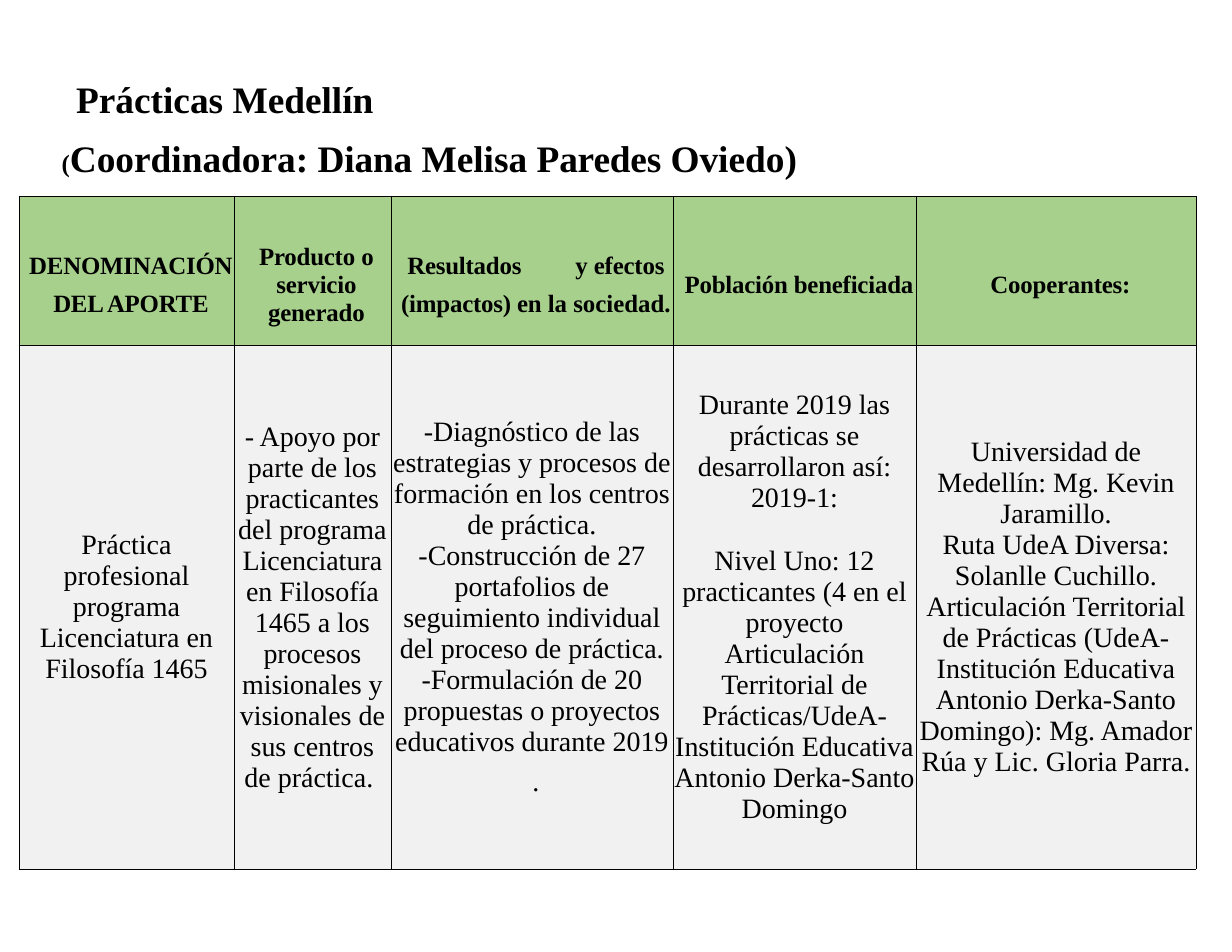
from lxml.etree import SubElement
from pptx import Presentation
from pptx.dml.color import RGBColor
from pptx.enum.text import MSO_ANCHOR, MSO_AUTO_SIZE, PP_ALIGN
from pptx.oxml.ns import qn
from pptx.util import Inches, Pt

FONT = "Times New Roman"
BLACK, GREEN, GRAY = "000000", "A8D08D", "F1F1F1"
TIGHT = -10  # letter spacing, hundredths of a point
COLUMN_WIDTHS = [1.92, 1.4, 2.52, 2.17, 2.5]
ROW_HEIGHTS = [1.33, 4.68]

# One list per column; each paragraph is a list of (text, letter spacing) runs
HEADINGS = [
    [[("DENOMINACIÓN", TIGHT)], [("DEL APORTE", TIGHT)]],
    [[("Producto ", TIGHT), ("o ", 0), ("servicio generado", TIGHT)]],
    [[("Resultados\t", TIGHT), ("y ", 0), ("efectos", TIGHT)],
     [("(impactos) en ", TIGHT), ("la sociedad.", 0)]],
    [[("Población beneficiada", TIGHT)]],
    [[("Cooperantes:", TIGHT)]],
]
HEADING_INDENTS = [0.08, 0.07, 0.07, 0.08, 0.08]
RESULT_TABS = [1.09, 1.41]

# One list per column; each paragraph is (text, space before, indent)
CONTRIBUTION = [
    [("Práctica profesional programa Licenciatura en Filosofía 1465", 0, 0)],
    [("- Apoyo por parte de los practicantes del programa Licenciatura en "
      "Filosofía 1465 a los procesos misionales y visionales de sus centros "
      "de práctica. ", 0, 0)],
    [("-Diagnóstico de las estrategias y procesos de formación en los centros "
      "de práctica.", 0, 0),
     ("-Construcción de 27 portafolios de seguimiento individual del proceso "
      "de práctica.", 0, 0),
     ("-Formulación de 20 propuestas o proyectos educativos durante 2019", 0, 0),
     (".", 6.3, 0.07)],
    [("Durante 2019 las prácticas se desarrollaron así:", 0, 0),
     ("2019-1:", 0, 0),
     ("Nivel Uno: 12 practicantes (4 en el proyecto Articulación Territorial "
      "de Prácticas/UdeA- Institución Educativa Antonio Derka-Santo Domingo",
      20.7, 0)],
    [("Universidad de Medellín: Mg. Kevin Jaramillo.", 0, 0),
     ("Ruta UdeA Diversa: Solanlle Cuchillo.", 0, 0),
     ("Articulación Territorial de Prácticas (UdeA-Institución Educativa "
      "Antonio Derka-Santo Domingo): Mg. Amador Rúa y Lic. Gloria Parra.", 0, 0)],
]


def color(hex_value):
    return RGBColor.from_string(hex_value)


def add_run(paragraph, text, size, bold=False, spacing=0):
    run = paragraph.add_run()
    run.text = text
    font = run.font
    font.name, font.size, font.bold = FONT, Pt(size), bold
    font.color.rgb = color(BLACK)
    if spacing:
        run._r.get_or_add_rPr().set("spc", str(spacing))


def format_paragraph(paragraph, align, before=0, indent=0):
    paragraph.alignment = align
    paragraph.space_before = Pt(before)
    properties = paragraph._p.get_or_add_pPr()
    properties.set("marL", str(Inches(indent)))
    properties.set("indent", "0")


def add_tabs(paragraph, stops):
    tabs = SubElement(paragraph._p.get_or_add_pPr(), qn("a:tabLst"))
    for stop in stops:
        SubElement(tabs, qn("a:tab"), pos=str(Inches(stop)), algn="l")


def next_paragraph(frame, index):
    return frame.paragraphs[0] if index == 0 else frame.add_paragraph()


def fill_heading_box(box, left, top, width, height, runs):
    box.left, box.top = Inches(left), Inches(top)
    box.width, box.height = Inches(width), Inches(height)
    frame = box.text_frame
    frame.word_wrap = True
    frame.auto_size = MSO_AUTO_SIZE.SHAPE_TO_FIT_TEXT
    frame.vertical_anchor = MSO_ANCHOR.TOP
    frame.margin_left = frame.margin_right = frame.margin_bottom = 0
    frame.margin_top = Inches(0.01)
    paragraph = frame.paragraphs[0]
    format_paragraph(paragraph, PP_ALIGN.LEFT, indent=0.01)
    for text, size, spacing in runs:
        add_run(paragraph, text, size, True, spacing)


def style_cell(cell, fill, margin_top=0):
    cell.margin_left = cell.margin_right = cell.margin_bottom = 0
    cell.margin_top = Inches(margin_top)
    cell.vertical_anchor = MSO_ANCHOR.MIDDLE
    properties = cell._tc.get_or_add_tcPr()
    for side in ("lnL", "lnR", "lnT", "lnB"):
        line = SubElement(properties, qn(f"a:{side}"), w=str(Pt(0.5)))
        solid = SubElement(line, qn("a:solidFill"))
        SubElement(solid, qn("a:srgbClr"), val=BLACK)
    cell.fill.solid()
    cell.fill.fore_color.rgb = color(fill)


def fill_column_heading(cell, paragraphs, indent):
    style_cell(cell, GREEN, margin_top=0.26)
    for index, runs in enumerate(paragraphs):
        paragraph = next_paragraph(cell.text_frame, index)
        format_paragraph(paragraph, PP_ALIGN.CENTER, 6.3 if index else 0, indent)
        if any("\t" in text for text, _ in runs):
            add_tabs(paragraph, RESULT_TABS)
        for text, spacing in runs:
            add_run(paragraph, text, 16, True, spacing)


def fill_contribution(cell, paragraphs):
    style_cell(cell, GRAY)
    for index, (text, before, indent) in enumerate(paragraphs):
        paragraph = next_paragraph(cell.text_frame, index)
        format_paragraph(paragraph, PP_ALIGN.CENTER, before, indent)
        add_run(paragraph, text, 18)


def add_contribution_table(slide):
    table = slide.shapes.add_table(
        len(ROW_HEIGHTS), len(COLUMN_WIDTHS), Inches(0.17), Inches(1.75),
        Inches(sum(COLUMN_WIDTHS)), Inches(sum(ROW_HEIGHTS))).table
    table.first_row = table.horz_banding = False
    for row, height in zip(table.rows, ROW_HEIGHTS):
        row.height = Inches(height)
    for index, width in enumerate(COLUMN_WIDTHS):
        table.columns[index].width = Inches(width)
        fill_column_heading(table.cell(0, index), HEADINGS[index],
                            HEADING_INDENTS[index])
        fill_contribution(table.cell(1, index), CONTRIBUTION[index])


def main():
    presentation = Presentation()
    presentation.slide_width, presentation.slide_height = Inches(11), Inches(8.5)
    slide = presentation.slides.add_slide(presentation.slide_layouts[5])

    # Title and coordinator
    fill_heading_box(slide.shapes.title, 0.67, 0.67, 2.8, 0.43,
                     [("Prácticas Medellín", 24, 0)])
    coordinator = slide.shapes.add_textbox(0, 0, 0, 0)
    fill_heading_box(coordinator, 0.54, 1.2, 6.66, 0.42,
                     [("(", 16, 0), ("Coordinadora: ", 24, 0),
                      ("Diana ", 24, TIGHT), ("Melisa ", 24, 0),
                      ("Paredes ", 24, TIGHT), ("Oviedo)", 24, 0)])

    # Contributions
    add_contribution_table(slide)
    presentation.save("out.pptx")


if __name__ == "__main__":
    main()
